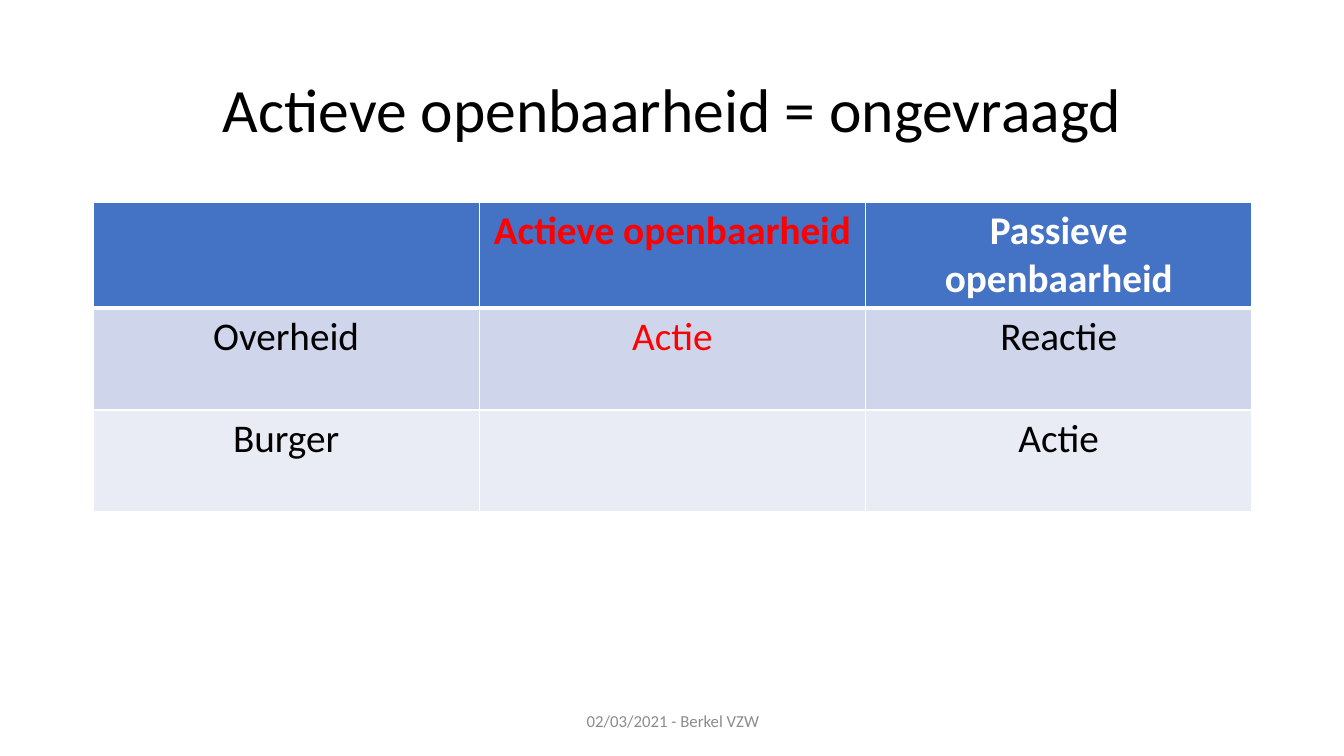
from lxml import etree
from pptx import Presentation
from pptx import util as u
from pptx.dml.color import RGBColor
from pptx.enum import text
from pptx.oxml import ns

TITLE = "Actieve openbaarheid = ongevraagd"
FOOTER = "02/03/2021 - Berkel VZW"
ROWS = [
    ["", "Actieve openbaarheid", "Passieve openbaarheid"],
    ["Overheid", "Actie", "Reactie"],
    ["Burger", "", "Actie"],
]
HIGHLIGHTS = {(0, 1), (1, 1)}
COLORS = {
    "black": "000000", "white": "FFFFFF", "red": "FF0000", "gray": "8C8C8C",
    "header": "4472C4", "band": "CFD5EA", "light": "E9EBF5",
}
ROW_FILLS = ["header", "band", "light"]
FONT = "Calibri"
SLIDE = (1344, 756)
TITLE_BOX = (93, 40, 1159, 146)
TABLE_BOX = (93, 202, 1159, 306)
FOOTER_BOX = (446, 701, 454, 40)


def px(n):
    return u.Emu(round(n * 914400 / 100.8))


def rgb(name):
    return RGBColor.from_string(COLORS[name])


def write(tf, words, size, color, bold=False):
    p = tf.paragraphs[0]
    p.alignment = text.PP_ALIGN.CENTER
    r = p.add_run()
    r.text = words
    r.font.name, r.font.size, r.font.bold = FONT, u.Pt(size), bold
    r.font.color.rgb = rgb(color)
    return p


def border(cell, widths):
    tc_pr = cell._tc.get_or_add_tcPr()
    for i, (side, width) in enumerate(widths.items()):
        ln = etree.Element(ns.qn("a:ln" + side), w=str(u.Pt(width)))
        fill = etree.SubElement(ln, ns.qn("a:solidFill"))
        etree.SubElement(fill, ns.qn("a:srgbClr"), val=COLORS["white"])
        tc_pr.insert(i, ln)


prs = Presentation()
prs.slide_width, prs.slide_height = map(px, SLIDE)
s = prs.slides.add_slide(prs.slide_layouts[5])

title = s.shapes.title
title.left, title.top, title.width, title.height = map(px, TITLE_BOX)
title.text_frame.vertical_anchor = text.MSO_ANCHOR.MIDDLE
write(title.text_frame, TITLE, 44, "black").line_spacing = 0.9

table = s.shapes.add_table(len(ROWS), len(ROWS[0]), *map(px, TABLE_BOX)).table
for i, row in enumerate(ROWS):
    for j, words in enumerate(row):
        cell = table.cell(i, j)
        border(cell, {"L": 1, "R": 1, "T": 3 if i == 1 else 1, "B": 3 if i == 0 else 1})
        cell.fill.solid()
        cell.fill.fore_color.rgb = rgb(ROW_FILLS[i])
        if words:
            color = "red" if (i, j) in HIGHLIGHTS else "white" if i == 0 else "black"
            write(cell.text_frame, words, 28, color, bold=i == 0)

footer = s.shapes.add_textbox(*map(px, FOOTER_BOX))
footer.text_frame.word_wrap = True
footer.text_frame.vertical_anchor = text.MSO_ANCHOR.MIDDLE
write(footer.text_frame, FOOTER, 12, "gray")

prs.save("out.pptx")
